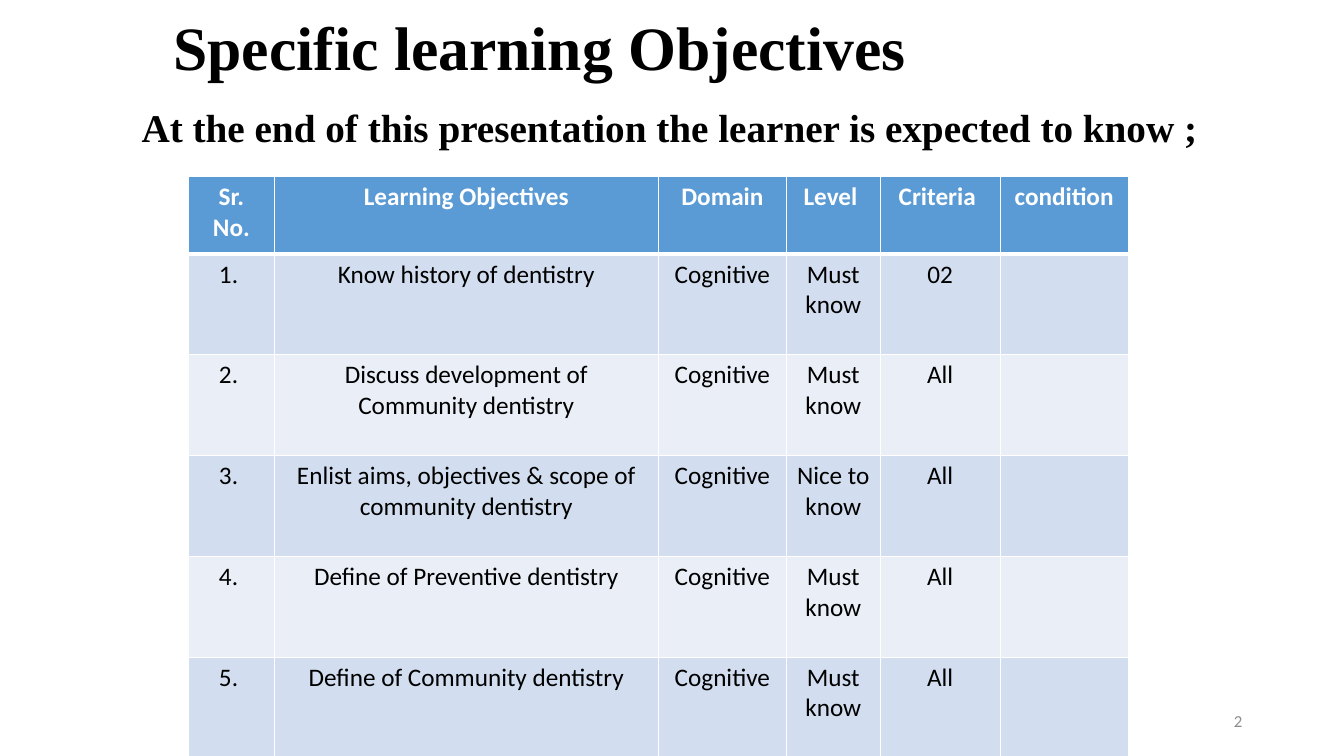
from dataclasses import dataclass

from lxml import etree
from pptx import Presentation
from pptx import util as u
from pptx.dml import color
from pptx.enum import text
from pptx.oxml import ns


@dataclass(frozen=True)
class Theme:
    heading_font: str = "Times New Roman"
    body_font: str = "Calibri"
    title_size: float = 44
    subtitle_size: float = 28
    table_size: float = 18
    number_size: float = 12
    ink: str = "000000"
    muted: str = "8C8C8C"
    white: str = "FFFFFF"
    header: str = "5B9BD5"
    bands: tuple = ("D2DEEF", "EAEFF7")
    thin: float = 1
    thick: float = 3


@dataclass(frozen=True)
class Box:
    left: float
    top: float
    width: float
    height: float

    def share(self, left, top, width, height):
        return Box(self.left + left * self.width, self.top + top * self.height,
                   width * self.width, height * self.height)

    def place(self):
        return [u.Inches(value) for value in
                (self.left, self.top, self.width, self.height)]


THEME = Theme()
PAGE = Box(0, 0, 13.33, 7.5)
COLUMN_WIDTHS = (0.85, 3.81, 1.27, 0.93, 1.19, 1.27)
ROW_HEIGHTS = (0.77, 1, 1, 1, 1, 1)
HEADINGS = ("Sr. No.", "Learning Objectives", "Domain", "Level ", "Criteria ", "condition")
OBJECTIVES = (
    ("Know history of dentistry", "Must know", "02"),
    ("Discuss development of Community dentistry", "Must know", "All"),
    ("Enlist aims, objectives & scope of community dentistry", "Nice to know", "All"),
    ("Define of Preventive dentistry", "Must know", "All"),
    ("Define of Community dentistry", "Must know", "All"),
)


def style(paragraph, name, size, ink, bold=False, align=text.PP_ALIGN.LEFT):
    paragraph.alignment = align
    font = paragraph.font
    font.name, font.size, font.bold = name, u.Pt(size), bold
    font.color.rgb = color.RGBColor.from_string(ink)


def add_text(slide, box, words, anchor, *look, **options):
    shape = slide.shapes.add_textbox(*box.place())
    frame = shape.text_frame
    frame.word_wrap = True
    frame.vertical_anchor = anchor
    paragraph = frame.paragraphs[0]
    paragraph.text = words
    style(paragraph, *look, **options)
    return paragraph


def add_heading(slide, box):
    title = add_text(slide, box.share(0.04, 0, 0.96, 0.73), "Specific learning Objectives",
                     text.MSO_ANCHOR.MIDDLE, THEME.heading_font, THEME.title_size,
                     THEME.ink, bold=True)
    title.line_spacing = 0.9
    add_text(slide, box.share(0.01, 0.65, 1.02, 0.35),
             "At the end of this presentation the learner is expected to know ;",
             text.MSO_ANCHOR.TOP, THEME.heading_font, THEME.subtitle_size,
             THEME.ink, bold=True)


def add_page_number(slide, box):
    add_text(slide, box, "2", text.MSO_ANCHOR.MIDDLE, THEME.body_font,
             THEME.number_size, THEME.muted, align=text.PP_ALIGN.RIGHT)


def add_borders(cell, row):
    properties = cell._tc.get_or_add_tcPr()
    top = THEME.thick if row == 1 else THEME.thin
    bottom = THEME.thick if row == 0 else THEME.thin
    for tag, width in (("a:lnL", THEME.thin), ("a:lnR", THEME.thin),
                       ("a:lnT", top), ("a:lnB", bottom)):
        line = etree.SubElement(properties, ns.qn(tag), w=str(u.Pt(width)))
        fill = etree.SubElement(line, ns.qn("a:solidFill"))
        etree.SubElement(fill, ns.qn("a:srgbClr"), val=THEME.white)


def fill_cell(cell, row, column, words):
    is_header = row == 0
    add_borders(cell, row)
    cell.fill.solid()
    cell.fill.fore_color.rgb = color.RGBColor.from_string(
        THEME.header if is_header else THEME.bands[(row - 1) % 2])
    paragraph = cell.text_frame.paragraphs[0]
    paragraph.text = words
    style(paragraph, THEME.body_font, THEME.table_size,
          THEME.white if is_header else THEME.ink, bold=is_header,
          align=text.PP_ALIGN.CENTER)
    if column == 0 and not is_header:
        properties = paragraph._p.get_or_add_pPr()
        properties.set("marL", str(u.Inches(0.38)))
        properties.set("indent", str(u.Inches(-0.38)))


def add_objectives(slide, box):
    rows = [HEADINGS] + [
        (f"{number}. ", objective, "Cognitive", level, criteria, "")
        for number, (objective, level, criteria) in enumerate(OBJECTIVES, 1)]
    table = slide.shapes.add_table(len(rows), len(HEADINGS), *box.place()).table
    for column, width in zip(table.columns, COLUMN_WIDTHS):
        column.width = u.Inches(box.width * width / sum(COLUMN_WIDTHS))
    for row, height in zip(table.rows, ROW_HEIGHTS):
        row.height = u.Inches(box.height * height / sum(ROW_HEIGHTS))
    for row, values in enumerate(rows):
        for column, words in enumerate(values):
            fill_cell(table.cell(row, column), row, column, words)


def main():
    presentation = Presentation()
    presentation.slide_width = u.Inches(PAGE.width)
    presentation.slide_height = u.Inches(PAGE.height)
    slide = presentation.slides.add_slide(presentation.slide_layouts[6])
    add_heading(slide, Box(1.2, -0.1, 10.55, 1.65))
    add_objectives(slide, Box(1.87, 1.75, sum(COLUMN_WIDTHS), sum(ROW_HEIGHTS)))
    add_page_number(slide, Box(9.42, 6.95, 3, 0.4))
    presentation.save("out.pptx")


if __name__ == "__main__":
    main()
